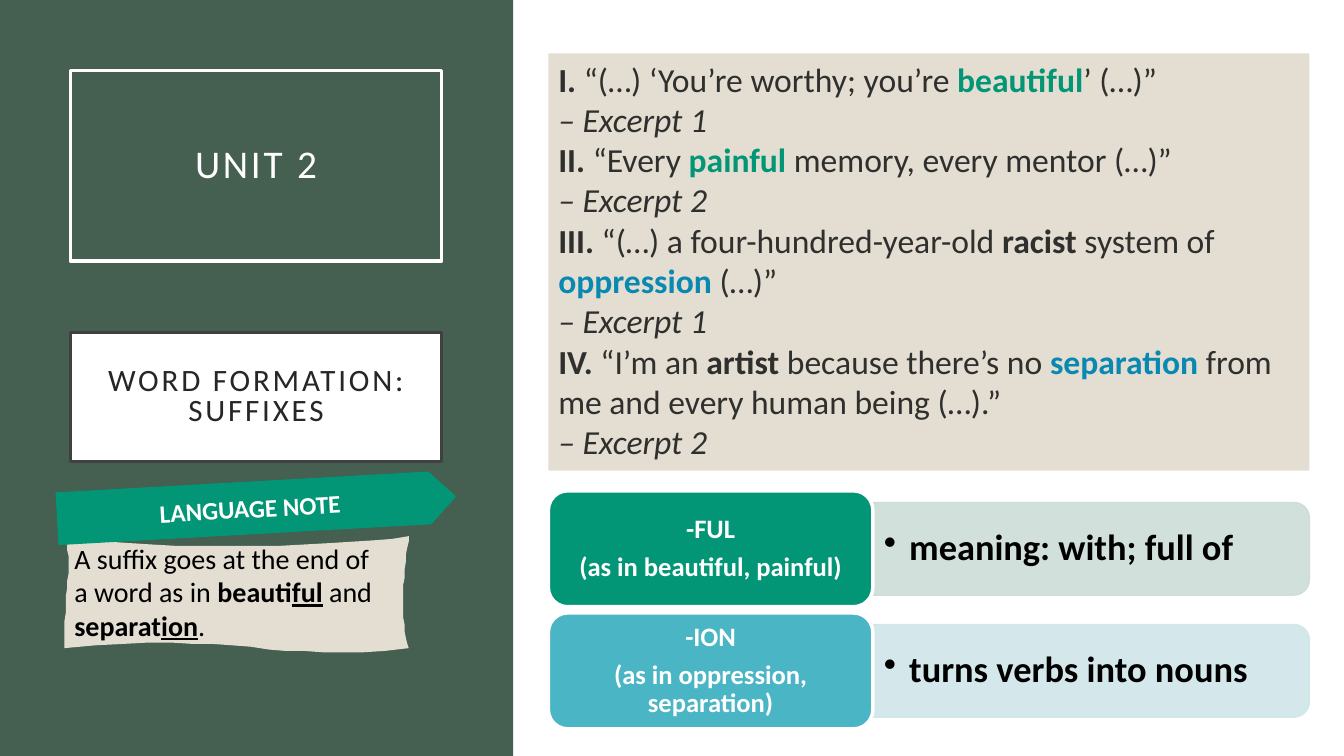
import pptx
import pptx.dml.color
import pptx.enum.shapes
import pptx.enum.text
import pptx.oxml.ns
import pptx.util
from lxml import etree

Pt = pptx.util.Pt
RGB = pptx.dml.color.RGBColor
SHAPE = pptx.enum.shapes.MSO_SHAPE
ALIGN = pptx.enum.text.PP_ALIGN
ANCHOR = pptx.enum.text.MSO_ANCHOR
qn = pptx.oxml.ns.qn

WHITE = RGB(0xFF, 0xFF, 0xFF)
BLACK = RGB(0, 0, 0)
FOREST = RGB(0x45, 0x5F, 0x51)
SAND = RGB(0xE3, 0xDE, 0xD1)
FRAME = RGB(0x40, 0x40, 0x40)
CHARCOAL = RGB(0x26, 0x26, 0x26)
INK = RGB(0x2F, 0x2F, 0x2E)
GREEN = RGB(0x02, 0x96, 0x76)
BLUE = RGB(0x09, 0x89, 0xB1)
TEAL = RGB(0x4A, 0xB5, 0xC4)
PALE_GREEN = RGB(0xCC, 0xDD, 0xD6)
PALE_TEAL = RGB(0xD0, 0xE6, 0xEA)

B = {"bold": True}
I = {"italic": True}
BU = {"bold": True, "underline": True}
FUL = {"bold": True, "color": GREEN}
ION = {"bold": True, "color": BLUE}

# A paragraph is a list of (text, format) runs.
TITLE = [[("UNIT 2", {})]]
SUBTITLE = [[("WORD FORMATION:", {})], [("SUFFIXES", {})]]
BANNER = [[("LANGUAGE NOTE", B)]]
NOTE = [
    [("A suffix goes at the end of", {})],
    [("a word as in ", {}), ("beauti", B), ("ful", BU), (" and", {})],
    [("separat", B), ("ion", BU), (".", {})],
]
EXCERPTS = [
    [("I. ", B), ("“(…) ‘You’re worthy; you’re ", {}), ("beautiful", FUL), ("’ (…)”", {})],
    [("– Excerpt 1", I)],
    [("II. ", B), ("“Every ", {}), ("painful", FUL), (" memory, every mentor (…)”", {})],
    [("– Excerpt 2", I)],
    [("III. ", B), ("“(…) a four-hundred-year-old ", {}), ("racist", B),
     (" system of ", {}), ("oppression", ION), (" (…)”", {})],
    [("– Excerpt 1", I)],
    [("IV. ", B), ("“I’m an ", {}), ("artist", B), (" because there’s no ", {}),
     ("separation", ION), (" from me and every human being (…).”", {})],
    [("– Excerpt 2", I)],
]
SUFFIXES = [
    ("-FUL", "(as in beautiful, painful)", "meaning: with; full of", GREEN, PALE_GREEN),
    ("-ION", "(as in oppression, separation)", "turns verbs into nouns", TEAL, PALE_TEAL),
]

# Wavy paper: start point, then cubic Bezier sides (control, control, end).
PAPER_START = (46, 383)
PAPER_SIDES = [
    [(85.7, 392.4), (234, 392.4), (292.3, 383)],
    [(288.7, 402.5), (285.1, 446.4), (292.3, 463)],
    [(196.6, 473.8), (167.8, 450.7), (46, 463)],
    [(45.4, 427.7), (52.6, 397.4), (46, 383)],
]

SUFFIX_LEFT, SUFFIX_TOP, SUFFIX_STEP = 391.7, 350.6, 87.2
LABEL_W, LABEL_H = 231.8, 82.8
BAR_W, BAR_H = 311.8, 66.2


def paint(shape, fill=None, line=None, weight=1):
    shape.shadow.inherit = False
    if fill is None:
        shape.fill.background()
    else:
        shape.fill.solid()
        shape.fill.fore_color.rgb = fill
    if line is None:
        shape.line.fill.background()
    else:
        shape.line.color.rgb = line
        shape.line.width = Pt(weight)


def write(shape, paragraphs, size, color, align=ALIGN.LEFT, anchor=ANCHOR.MIDDLE,
          inset=(7.2, 3.6), spacing=1, after=0, tracking=0, bullet=False):
    tf = shape.text_frame
    frame = {"word_wrap": True, "vertical_anchor": anchor,
             "margin_left": Pt(inset[0]), "margin_right": Pt(inset[0]),
             "margin_top": Pt(inset[1]), "margin_bottom": Pt(inset[1])}
    for name, value in frame.items():
        setattr(tf, name, value)
    for i, runs in enumerate(paragraphs):
        p = tf.add_paragraph() if i else tf.paragraphs[0]
        layout = {"alignment": align, "line_spacing": spacing, "space_after": Pt(after)}
        for name, value in layout.items():
            setattr(p, name, value)
        if bullet:
            pPr = p._p.get_or_add_pPr()
            pPr.set("marL", str(Pt(18)))
            pPr.set("indent", str(-Pt(18)))
            etree.SubElement(pPr, qn("a:buChar")).set("char", "•")
        for text, style in runs:
            r = p.add_run()
            r.text = text
            font = {"name": "Calibri", "size": Pt(size), "color": color, **style}
            r.font.color.rgb = font.pop("color")
            for name, value in font.items():
                setattr(r.font, name, value)
            if tracking:
                r._r.get_or_add_rPr().set("spc", str(tracking * 100))


def curve_points(start, sides, steps=16):
    """Points along a chain of cubic Bezier curves."""
    points = []
    for c1, c2, end in sides:
        for k in range(1, steps + 1):
            t = k / steps
            u = 1 - t
            points.append(tuple(
                u**3 * a + 3 * u * u * t * b + 3 * u * t * t * c + t**3 * d
                for a, b, c, d in zip(start, c1, c2, end)))
        start = end
    return points


def main():
    prs = pptx.Presentation()
    prs.slide_width, prs.slide_height = Pt(960), Pt(540)
    s = prs.slides.add_slide(prs.slide_layouts[6])

    def add(kind, x, y, w, h, **look):
        sp = s.shapes.add_shape(kind, Pt(x), Pt(y), Pt(w), Pt(h))
        paint(sp, **look)
        return sp

    add(SHAPE.RECTANGLE, 0, 0, 366.5, 540, fill=FOREST)
    heading = {"align": ALIGN.CENTER, "inset": (14.4, 14.4), "tracking": 2}
    title = add(SHAPE.RECTANGLE, 50.4, 50.4, 265, 136.1, line=WHITE, weight=2.5)
    write(title, TITLE, 28, WHITE, spacing=0.9, **heading)
    subtitle = add(SHAPE.RECTANGLE, 50.4, 237.6, 265, 92.2, fill=WHITE, line=FRAME, weight=2.5)
    write(subtitle, SUBTITLE, 22.2, CHARCOAL, spacing=0.8, **heading)

    fb = s.shapes.build_freeform(*PAPER_START, scale=Pt(1))
    fb.add_line_segments(curve_points(PAPER_START, PAPER_SIDES), close=True)
    paper = fb.convert_to_shape()
    paint(paper, fill=SAND)
    write(paper, NOTE, 20, BLACK, anchor=ANCHOR.TOP)

    banner = add(SHAPE.PENTAGON, 41, 344.2, 284.4, 36.7, fill=GREEN, line=GREEN)
    banner.rotation = -3.2
    write(banner, BANNER, 18, WHITE, align=ALIGN.CENTER)

    excerpts = add(SHAPE.RECTANGLE, 391.7, 38.2, 543.6, 298.1, fill=SAND)
    write(excerpts, EXCERPTS, 24, INK, anchor=ANCHOR.TOP)

    for i, (suffix, examples, meaning, strong, pale) in enumerate(SUFFIXES):
        top = SUFFIX_TOP + i * SUFFIX_STEP
        bar_left = SUFFIX_LEFT + LABEL_W
        middle = top + LABEL_H / 2
        # The bar stands upright before its quarter turn.
        bar = add(SHAPE.ROUND_2_SAME_RECTANGLE, bar_left + (BAR_W - BAR_H) / 2,
                  middle - BAR_W / 2, BAR_H, BAR_W, fill=pale, line=pale)
        bar.rotation = 90
        for color in bar._element.spPr.iter(qn("a:srgbClr")):
            etree.SubElement(color, qn("a:alpha")).set("val", "90000")
        text = s.shapes.add_textbox(Pt(bar_left), Pt(middle - 29.9), Pt(308.9), Pt(59.8))
        write(text, [[(meaning, B)]], 26, BLACK, inset=(7.9, 3.6),
              spacing=0.9, after=3.9, bullet=True)
        label = add(SHAPE.ROUNDED_RECTANGLE, SUFFIX_LEFT, top, LABEL_W, LABEL_H,
                    fill=strong, line=WHITE, weight=2.5)
        write(label, [[(suffix, B)], [(examples, B)]], 19, WHITE, align=ALIGN.CENTER,
              inset=(5.8, 2.9), spacing=0.9, after=6.65)

    prs.save("out.pptx")


if __name__ == "__main__":
    main()
